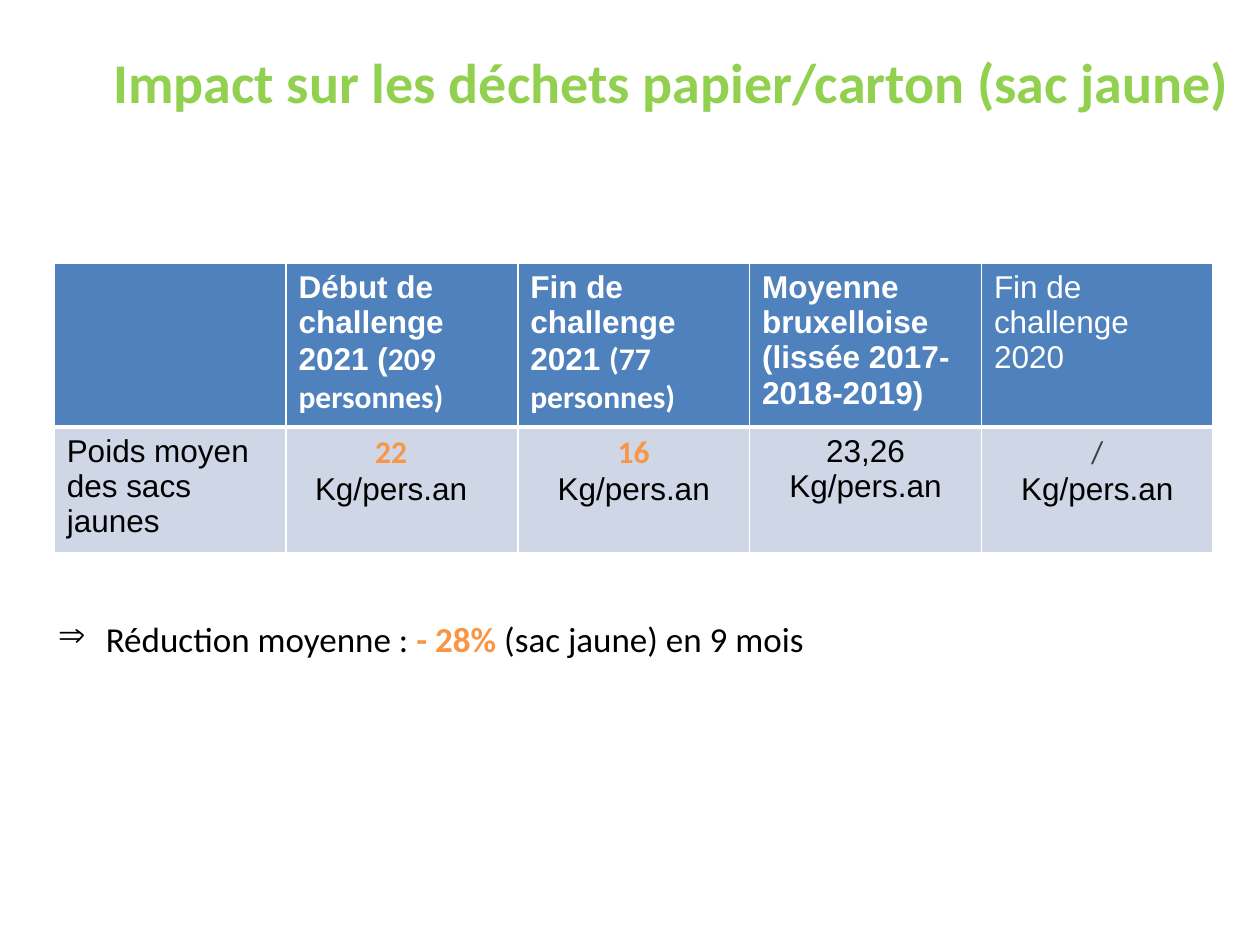
import pptx
import pptx.util
from lxml import etree
from pptx.dml.color import RGBColor
from pptx.enum.text import MSO_ANCHOR, MSO_AUTO_SIZE, PP_ALIGN
from pptx.oxml.ns import qn

Inches, Pt = pptx.util.Inches, pptx.util.Pt

GREEN = RGBColor(0x92, 0xD0, 0x50)
ORANGE = RGBColor(0xF7, 0x96, 0x46)
BLUE = RGBColor(0x4F, 0x81, 0xBD)
PALE_BLUE = RGBColor(0xCF, 0xD7, 0xE7)
WHITE = RGBColor(0xFF, 0xFF, 0xFF)
BLACK = RGBColor(0, 0, 0)
GREY = RGBColor(0x3F, 0x3F, 0x3F)

# Run styles: font, colour, bold
TITLE = ("Calibri", GREEN, True)
HEAD = ("Arial", WHITE, True)
HEAD_COUNT = ("Calibri", WHITE, True)
HEAD_LIGHT = ("Arial", WHITE, False)
BODY = ("Arial", BLACK, False)
RESULT = ("Calibri", ORANGE, True)
MISSING = ("Calibri", GREY, False)
NOTE = ("Calibri", BLACK, False)

# Content: a cell is a list of paragraphs, a paragraph a list of (text, style)
HEADING = [("Impact sur les déchets papier/carton (sac jaune)", TITLE)]
UNIT = [("Kg/pers.an", BODY)]
HEADER_ROW = [
    [],
    [[("Début de challenge 2021 (", HEAD), ("209 personnes)", HEAD_COUNT)]],
    [[("Fin de challenge 2021 ", HEAD), ("(77 personnes)", HEAD_COUNT)]],
    [[("Moyenne bruxelloise", HEAD)], [("(lissée 2017-2018-2019)", HEAD)]],
    [[("Fin de challenge 2020", HEAD_LIGHT)]],
]
WEIGHT_ROW = [
    [[("Poids moyen des sacs jaunes", BODY)]],
    [[("22", RESULT)], UNIT],
    [[("16", RESULT)], UNIT],
    [[("23,26", BODY)], UNIT],
    [[("/", MISSING)], UNIT],
]
REDUCTION = [("Réduction moyenne : ", NOTE), ("- 28% ", RESULT),
             ("(sac jaune) en 9 mois", NOTE)]

# Table grid, in inches
TABLE_LEFT, TABLE_TOP = 0.43, 2.09
COLUMN_WIDTH = 1.84
ROW_HEIGHTS = (1.3, 1.0)


def write(paragraph, runs, size):
    for text, (font, colour, bold) in runs:
        run = paragraph.add_run()
        run.text = text
        run.font.name, run.font.size, run.font.bold = font, Pt(size), bold
        run.font.color.rgb = colour


def place(shape, left, top, width, height):
    shape.left, shape.top = Inches(left), Inches(top)
    shape.width, shape.height = Inches(width), Inches(height)
    frame = shape.text_frame
    frame.word_wrap = True
    frame.auto_size = MSO_AUTO_SIZE.NONE
    frame.vertical_anchor = MSO_ANCHOR.TOP
    frame.margin_left = frame.margin_right = Inches(0.07)
    frame.margin_top = frame.margin_bottom = Inches(0.07)
    paragraph = frame.paragraphs[0]
    paragraph.alignment = PP_ALIGN.LEFT
    paragraph.line_spacing = 1.3
    return paragraph


def add_borders(cell, bottom_width):
    properties = cell._tc.get_or_add_tcPr()
    widths = (("lnL", 1), ("lnR", 1), ("lnT", 1), ("lnB", bottom_width))
    for position, (side, width) in enumerate(widths):
        line = etree.Element(qn("a:" + side), w=str(Pt(width)))
        fill = etree.SubElement(line, qn("a:solidFill"))
        etree.SubElement(fill, qn("a:srgbClr"), val=str(WHITE))
        properties.insert(position, line)


def fill_cell(cell, paragraphs, colour, centred, bottom_width):
    cell.fill.solid()
    cell.fill.fore_color.rgb = colour
    add_borders(cell, bottom_width)
    frame = cell.text_frame
    for index, runs in enumerate(paragraphs):
        paragraph = frame.add_paragraph() if index else frame.paragraphs[0]
        paragraph.alignment = PP_ALIGN.CENTER if centred else PP_ALIGN.LEFT
        write(paragraph, runs, 18)


presentation = pptx.Presentation()
presentation.slide_width, presentation.slide_height = Inches(10), Inches(7.5)
slide = presentation.slides.add_slide(presentation.slide_layouts[5])

# Title
write(place(slide.shapes.title, 0.83, 0.15, 9.06, 0.74), HEADING, 32)

# Table of weights
columns = len(HEADER_ROW)
weights = slide.shapes.add_table(
    len(ROW_HEIGHTS), columns, Inches(TABLE_LEFT), Inches(TABLE_TOP),
    Inches(columns * COLUMN_WIDTH), Inches(sum(ROW_HEIGHTS))).table
for row, height in zip(weights.rows, ROW_HEIGHTS):
    row.height = Inches(height)
for column in range(columns):
    weights.columns[column].width = Inches(COLUMN_WIDTH)
    fill_cell(weights.cell(0, column), HEADER_ROW[column], BLUE, False, 3)
    fill_cell(weights.cell(1, column), WEIGHT_ROW[column], PALE_BLUE, column > 0, 1)

# The first result sits slightly left of its column's centre
first_result = weights.cell(1, 1).text_frame.paragraphs[0]
first_result._p.get_or_add_pPr().set("marR", str(Inches(0.17)))

# Conclusion with its arrow bullet
conclusion = place(slide.shapes.add_textbox(0, 0, 0, 0), 0.39, 4.73, 9.36, 2.4)
bullet = conclusion._p.get_or_add_pPr()
bullet.set("marL", str(Inches(0.38)))
bullet.set("indent", str(Inches(-0.38)))
bullet_colour = etree.SubElement(bullet, qn("a:buClr"))
etree.SubElement(bullet_colour, qn("a:srgbClr"), val=str(BLACK))
etree.SubElement(bullet, qn("a:buChar"), char="⇒")
write(conclusion, REDUCTION, 20)

presentation.save("out.pptx")
